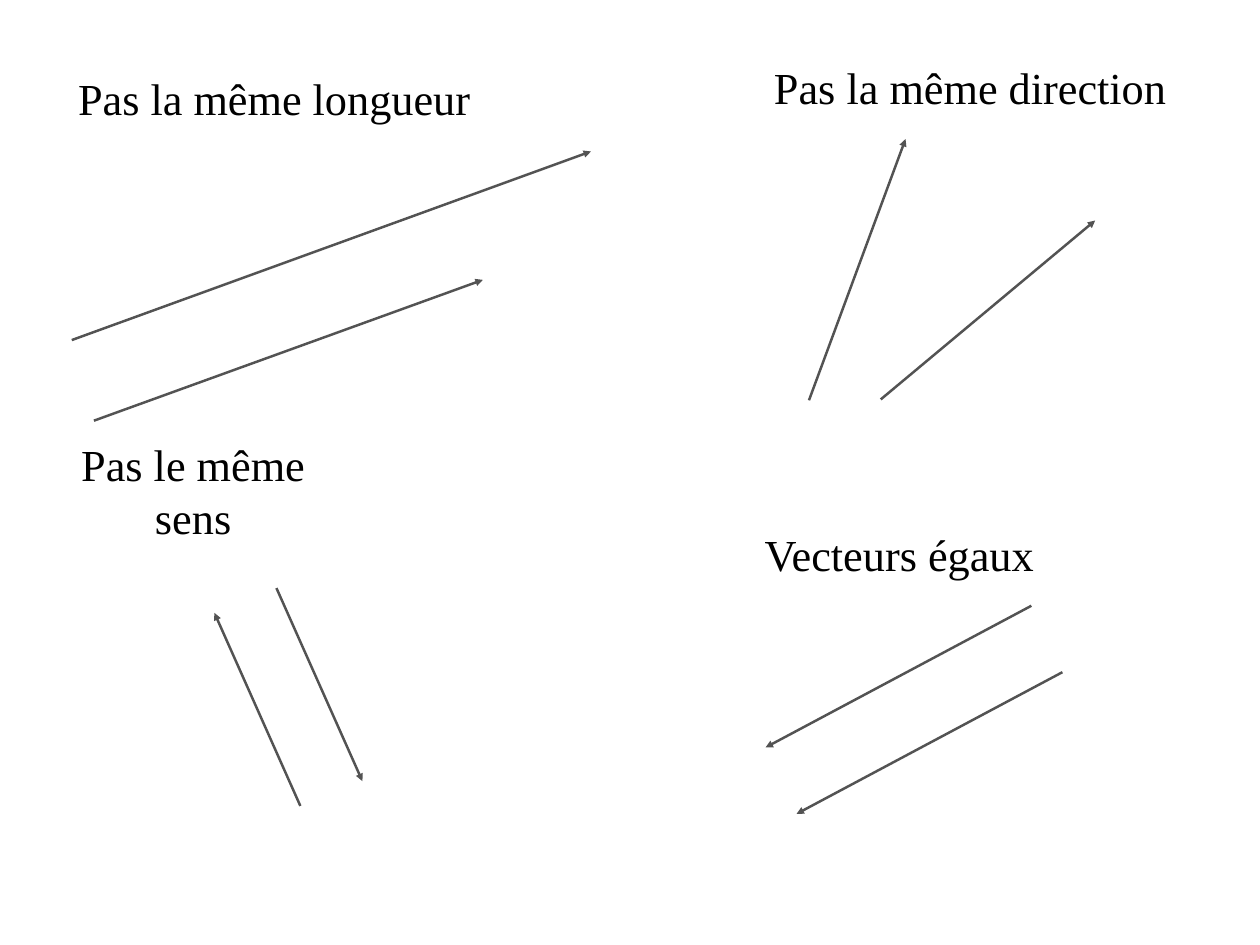
from dataclasses import dataclass

from lxml import etree
from pptx import Presentation
from pptx.dml.color import RGBColor
from pptx.enum.shapes import MSO_CONNECTOR
from pptx.enum.text import MSO_ANCHOR, MSO_AUTO_SIZE, PP_ALIGN
from pptx.oxml.ns import qn
from pptx.slide import Slide
from pptx.util import Inches, Pt

STRAIGHT = MSO_CONNECTOR.STRAIGHT
MIDDLE = MSO_ANCHOR.MIDDLE
NO_AUTOFIT = MSO_AUTO_SIZE.NONE
CENTER = PP_ALIGN.CENTER
BLACK = RGBColor(0x00, 0x00, 0x00)
GREY = RGBColor(0x53, 0x53, 0x53)

INSET = Inches(0.06)
FRAME_FORMAT = {
    "margin_left": INSET, "margin_right": INSET,
    "margin_top": INSET, "margin_bottom": INSET,
    "vertical_anchor": MIDDLE, "auto_size": NO_AUTOFIT,
}
FONT_FORMAT = {"name": "Times New Roman", "size": Pt(36)}


@dataclass
class Title:
    text: str
    left: float
    top: float
    width: float
    height: float = 0.68
    wrap: bool = False


@dataclass
class Vector:
    x: float
    y: float
    dx: float
    dy: float


@dataclass
class Panel:
    title: Title
    vectors: list[Vector]


# Each panel compares two vectors, given by origin and components
PANELS = [
    Panel(Title("Pas la même longueur", 0.82, 0.76, 4.55),
          [Vector(0.81, 3.84, 5.86, -2.13), Vector(1.06, 4.75, 4.39, -1.59)]),
    Panel(Title("Pas la même direction", 8.68, 0.64, 4.54),
          [Vector(9.13, 4.52, 1.09, -2.95), Vector(9.94, 4.51, 2.42, -2.02)]),
    Panel(Title("Pas le même sens", 0.83, 4.9, 2.7, 1.28, wrap=True),
          [Vector(3.39, 9.1, -0.97, -2.18), Vector(3.12, 6.64, 0.97, 2.18)]),
    Panel(Title("Vecteurs égaux", 8.57, 5.91, 3.16),
          [Vector(11.64, 6.84, -3, 1.6), Vector(11.99, 7.59, -3, 1.6)]),
]


def add_vector(s: Slide, v: Vector) -> None:
    line = s.shapes.add_connector(STRAIGHT, Inches(v.x), Inches(v.y),
                                  Inches(v.x + v.dx), Inches(v.y + v.dy))
    line.line.color.rgb = GREY
    line.line.width = Pt(2)
    # Arrowhead at the end, no shadow
    etree.SubElement(line.line._get_or_add_ln(), qn("a:tailEnd"), type="triangle")
    etree.SubElement(line._element.spPr, qn("a:effectLst"))


def add_title(s: Slide, t: Title) -> None:
    sp = s.shapes.add_textbox(Inches(t.left), Inches(t.top),
                              Inches(t.width), Inches(t.height))
    tf = sp.text_frame
    for name, value in FRAME_FORMAT.items():
        setattr(tf, name, value)
    tf.word_wrap = t.wrap
    p = tf.paragraphs[0]
    p.alignment = CENTER
    r = p.add_run()
    r.text = t.text
    for name, value in FONT_FORMAT.items():
        setattr(r.font, name, value)
    r.font.color.rgb = BLACK


def main() -> None:
    prs = Presentation()
    prs.slide_width, prs.slide_height = Inches(14.22), Inches(10.67)
    s = prs.slides.add_slide(prs.slide_layouts[6])
    for panel in PANELS:
        for vector in panel.vectors:
            add_vector(s, vector)
        add_title(s, panel.title)
    prs.save("out.pptx")


if __name__ == "__main__":
    main()
